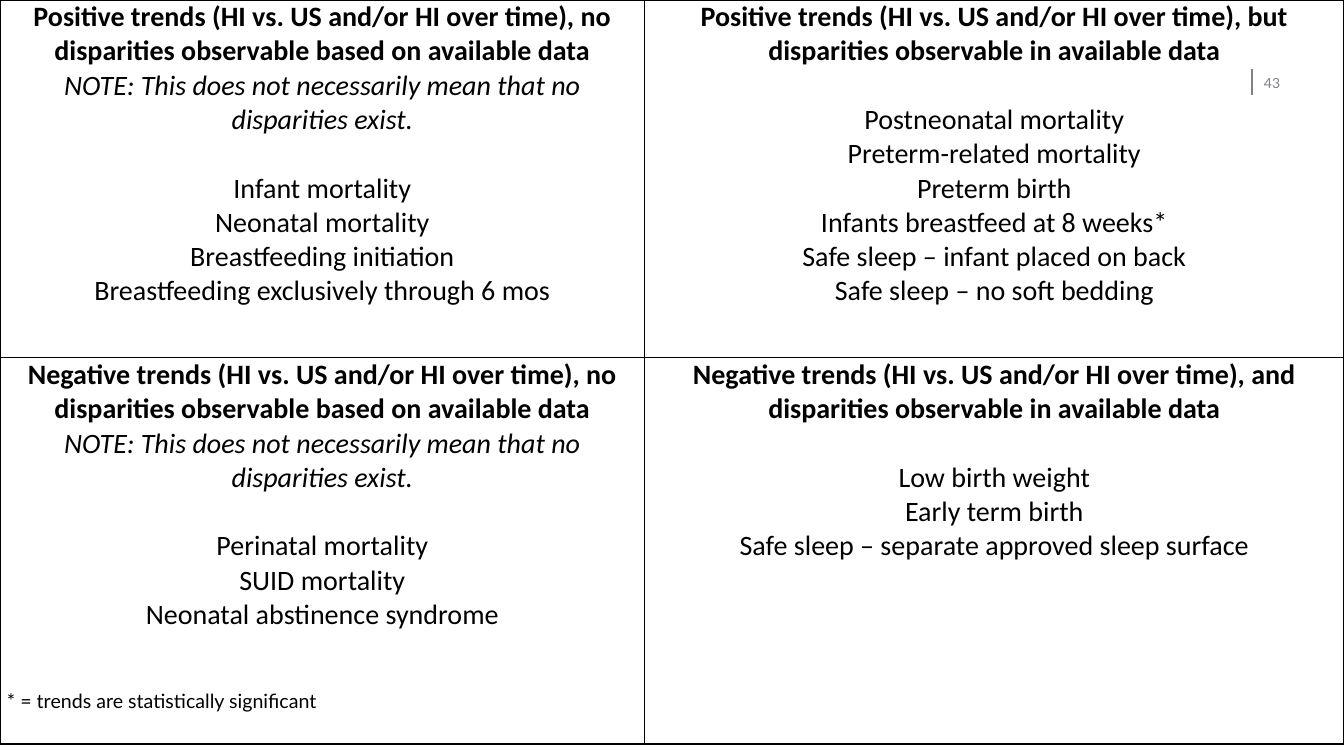
import pptx
import pptx.dml.color
import pptx.enum.shapes
import pptx.enum.text
import pptx.oxml
import pptx.oxml.ns
import pptx.util

Pt = pptx.util.Pt
ALIGN = pptx.enum.text.PP_ALIGN
BLANK_LINE = 24.4

NO_DISPARITY = "no disparities observable based on available data"
NOTE = "NOTE: This does not necessarily mean that no disparities exist."
FOOTNOTE = "* = trends are statistically significant"

# Each quadrant: heading, note, indicators, footnote
QUADRANTS = [
    [
        (f"Positive trends (HI vs. US and/or HI over time), {NO_DISPARITY}", NOTE,
         ["Infant mortality", "Neonatal mortality", "Breastfeeding initiation",
          "Breastfeeding exclusively through 6 mos"], None),
        ("Positive trends (HI vs. US and/or HI over time), but disparities "
         "observable in available data", None,
         ["Postneonatal mortality", "Preterm-related mortality", "Preterm birth",
          "Infants breastfeed at 8 weeks*", "Safe sleep – infant placed on back",
          "Safe sleep – no soft bedding"], None),
    ],
    [
        (f"Negative trends (HI vs. US and/or HI over time), {NO_DISPARITY}", NOTE,
         ["Perinatal mortality", "SUID mortality", "Neonatal abstinence syndrome"],
         FOOTNOTE),
        ("Negative trends (HI vs. US and/or HI over time), and disparities "
         "observable in available data", None,
         ["Low birth weight", "Early term birth",
          "Safe sleep – separate approved sleep surface"], None),
    ],
]


def rgb(value):
    return pptx.dml.color.RGBColor.from_string(value)


def set_attrs(obj, values):
    for name, value in values.items():
        setattr(obj, name, value)


class SlideBuilder:
    ink = "000000"
    grey = "808285"
    body = {"name": "Calibri", "size": Pt(20), "bold": False, "italic": False}
    small = {**body, "name": "Lato", "size": Pt(14)}
    page = {**body, "name": "Lato", "size": Pt(10)}

    def __init__(self, slide):
        self.s = slide

    def add_text(self, p, text, font, color, align=ALIGN.CENTER, before=0):
        set_attrs(p, {"alignment": align, "space_before": Pt(before)})
        r = p.add_run()
        r.text = text
        set_attrs(r.font, font)
        r.font.color.rgb = rgb(color)

    def rule(self, x, top, bottom):
        """Draw a thin grey vertical line."""
        line = self.s.shapes.add_connector(
            pptx.enum.shapes.MSO_CONNECTOR.STRAIGHT, Pt(x), Pt(top), Pt(x), Pt(bottom))
        line.line.color.rgb = rgb(self.grey)
        line.line.width = Pt(1)
        line._element.spPr.append(pptx.oxml.parse_xml(
            f'<a:effectLst {pptx.oxml.ns.nsdecls("a")}/>'))

    def page_number(self, text, x, y, w, h):
        sp = self.s.shapes.add_textbox(Pt(x), Pt(y), Pt(w), Pt(h))
        tf = sp.text_frame
        set_attrs(tf, {
            "word_wrap": True, "margin_left": 0, "margin_right": 0,
            "vertical_anchor": pptx.enum.text.MSO_ANCHOR.MIDDLE})
        self.add_text(tf.paragraphs[0], text, self.page, self.grey, ALIGN.LEFT)

    def table(self, quadrants, widths, heights):
        frame = self.s.shapes.add_table(
            len(heights), len(widths), 0, 0, Pt(sum(widths)), Pt(sum(heights)))
        table = frame.table
        set_attrs(table, {"first_row": False, "horz_banding": False})
        for column, width in zip(table.columns, widths):
            column.width = Pt(width)
        for row, height, contents in zip(table.rows, heights, quadrants):
            row.height = Pt(height)
            for cell, content in zip(row.cells, contents):
                self.border(cell)
                cell.fill.background()
                self.quadrant(cell, *content)

    def border(self, cell):
        tc_pr = cell._tc.get_or_add_tcPr()
        for side in ("lnL", "lnR", "lnT", "lnB"):
            tc_pr.append(pptx.oxml.parse_xml(
                f'<a:{side} {pptx.oxml.ns.nsdecls("a")} w="{Pt(1)}"><a:solidFill>'
                f'<a:srgbClr val="{self.ink}"/></a:solidFill></a:{side}>'))

    def quadrant(self, cell, heading, note, indicators, footnote):
        set_attrs(cell, {"margin_left": Pt(5), "margin_right": Pt(5),
                         "margin_top": 0, "margin_bottom": 0})
        tf = cell.text_frame
        self.add_text(tf.paragraphs[0], heading, {**self.body, "bold": True}, self.ink)
        if note:
            self.add_text(tf.add_paragraph(), note, {**self.body, "italic": True}, self.ink)
        for i, indicator in enumerate(indicators):
            self.add_text(tf.add_paragraph(), indicator, self.body, self.ink,
                          before=0 if i else BLANK_LINE)
        if footnote:
            self.add_text(tf.add_paragraph(), footnote, self.small, self.ink,
                          ALIGN.LEFT, before=41)


def main():
    prs = pptx.Presentation()
    set_attrs(prs, {"slide_width": Pt(960), "slide_height": Pt(540)})
    b = SlideBuilder(prs.slides.add_slide(prs.slide_layouts[6]))
    b.rule(894.2, 49, 67.7)
    b.page_number("43", 902.9, 44.6, 23.8, 28.8)
    b.table(QUADRANTS, widths=(460.5, 499.5), heights=(255.6, 275.8))
    prs.save("out.pptx")


if __name__ == "__main__":
    main()
